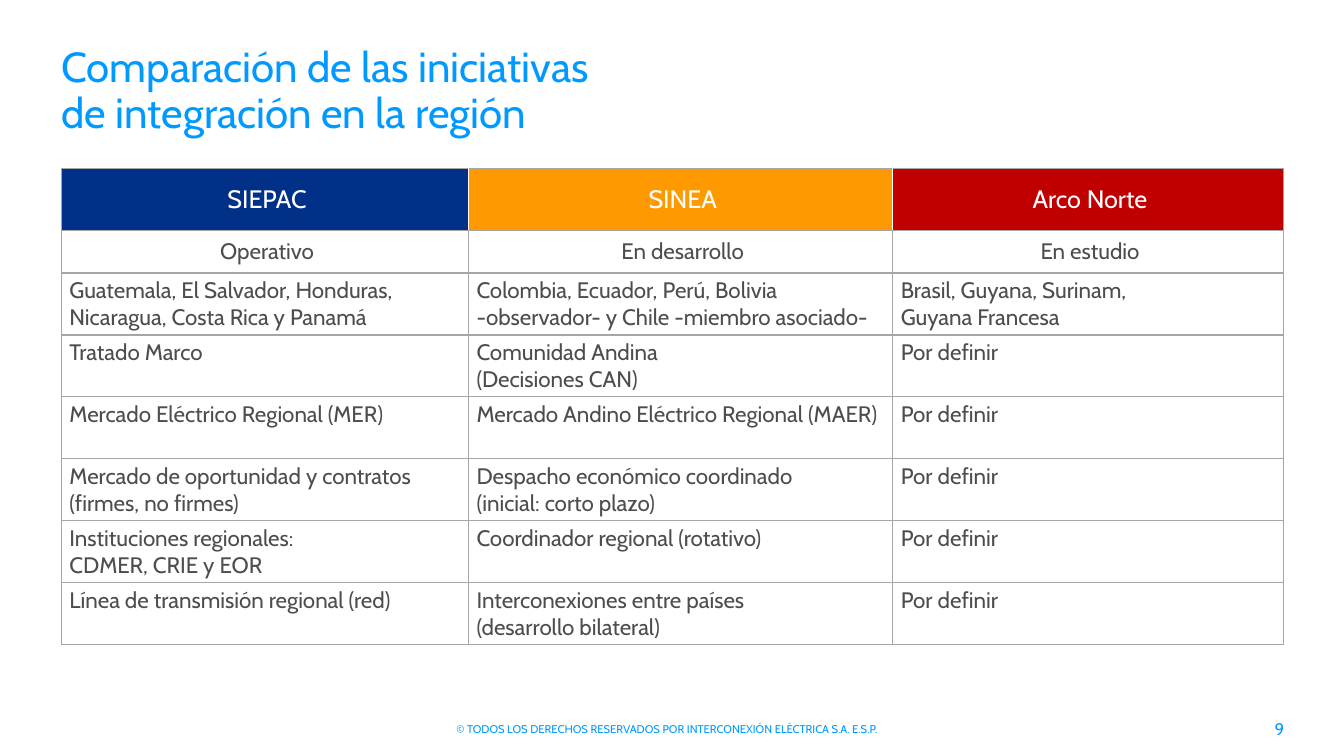
from lxml import etree
from pptx import Presentation
from pptx.dml.color import RGBColor
from pptx.enum.text import MSO_ANCHOR, PP_ALIGN
from pptx.oxml.ns import qn
from pptx.util import Cm, Pt

LEFT, CENTER, RIGHT = PP_ALIGN.LEFT, PP_ALIGN.CENTER, PP_ALIGN.RIGHT
TOP, MIDDLE, BOTTOM = MSO_ANCHOR.TOP, MSO_ANCHOR.MIDDLE, MSO_ANCHOR.BOTTOM

FONT = "Cabin"
SKY = RGBColor(0x00, 0x99, 0xFF)
NAVY = RGBColor(0x00, 0x30, 0x87)
ORANGE = RGBColor(0xFF, 0x99, 0x00)
RED = RGBColor(0xC0, 0x00, 0x00)
WHITE = RGBColor(0xFF, 0xFF, 0xFF)
TEXT_GRAY = RGBColor(0x4D, 0x4D, 0x4D)
LINE_GRAY = RGBColor(0xA6, 0xA6, 0xA6)

HEADER_FILLS = [NAVY, ORANGE, RED]
COLUMN_WIDTHS = [10.26, 10.69, 9.84]
ROW_HEIGHT = 1.56
STATUS_HEIGHT = 1.08
PENDING = "Por definir"
COMPARISON = [
    ["SIEPAC", "SINEA", "Arco Norte"],
    ["Operativo", "En desarrollo", "En estudio"],
    ["Guatemala, El Salvador, Honduras, Nicaragua, Costa Rica y Panamá",
     "Colombia, Ecuador, Perú, Bolivia\n-observador- y Chile -miembro asociado-",
     "Brasil, Guyana, Surinam,\nGuyana Francesa"],
    ["Tratado Marco", "Comunidad Andina\n(Decisiones CAN)", PENDING],
    ["Mercado Eléctrico Regional (MER)",
     "Mercado Andino Eléctrico Regional (MAER)", PENDING],
    ["Mercado de oportunidad y contratos (firmes, no firmes)",
     "Despacho económico coordinado\n(inicial: corto plazo)", PENDING],
    ["Instituciones regionales:\nCDMER, CRIE y EOR",
     "Coordinador regional (rotativo)", PENDING],
    ["Línea de transmisión regional (red)",
     "Interconexiones entre países\n(desarrollo bilateral)", PENDING],
]


def set_attributes(target, values):
    for name, value in values.items():
        setattr(target, name, value)


def write_text(paragraph, text, size, color, alignment):
    paragraph.text = text
    paragraph.alignment = alignment
    set_attributes(paragraph.font, {"name": FONT, "size": Pt(size)})
    paragraph.font.color.rgb = color


def set_margins(target, margins):
    sides = ("margin_left", "margin_top", "margin_right", "margin_bottom")
    set_attributes(target, {side: Cm(margin) for side, margin in zip(sides, margins)})


def add_text(slide, box, text, size, alignment, anchor, margins):
    frame = slide.shapes.add_textbox(*[Cm(length) for length in box]).text_frame
    set_attributes(frame, {"word_wrap": True, "vertical_anchor": anchor})
    set_margins(frame, margins)
    write_text(frame.paragraphs[0], text, size, SKY, alignment)
    return frame.paragraphs[0]


def add_border(cell, side, color, width):
    properties = cell._tc.get_or_add_tcPr()
    line = etree.SubElement(properties, qn(f"a:ln{side}"), w=str(Pt(width)))
    fill = etree.SubElement(line, qn("a:solidFill"))
    etree.SubElement(fill, qn("a:srgbClr"), val=str(color))


def format_cell(cell, text, row, column):
    is_header = row == 0
    is_centered = row < 2
    last_column = len(COLUMN_WIDTHS) - 1
    white_sides = {"L": is_header and column > 0,
                   "R": is_header and column < last_column}
    for side in "LRTB":
        if white_sides.get(side):
            add_border(cell, side, WHITE, 0.75)
        else:
            add_border(cell, side, LINE_GRAY, 1)
    cell.fill.solid()
    cell.fill.fore_color.rgb = HEADER_FILLS[column] if is_header else WHITE
    cell.vertical_anchor = MIDDLE if is_centered else TOP
    set_margins(cell, (0.2, 0.1, 0.1, 0.1))
    write_text(cell.text_frame.paragraphs[0], text,
               18 if is_header else 16,
               WHITE if is_header else TEXT_GRAY,
               CENTER if is_centered else LEFT)


def add_comparison_table(slide):
    heights = [STATUS_HEIGHT if row == 1 else ROW_HEIGHT for row in range(len(COMPARISON))]
    table = slide.shapes.add_table(
        len(heights), len(COLUMN_WIDTHS), Cm(1.55), Cm(4.24),
        Cm(sum(COLUMN_WIDTHS)), Cm(sum(heights))).table
    for column, width in zip(table.columns, COLUMN_WIDTHS):
        column.width = Cm(width)
    for row, height in zip(table.rows, heights):
        row.height = Cm(height)
    for row, texts in enumerate(COMPARISON):
        for column, text in enumerate(texts):
            format_cell(table.cell(row, column), text, row, column)


def main():
    presentation = Presentation()
    set_attributes(presentation, {"slide_width": Cm(33.87), "slide_height": Cm(19.05)})
    slide = presentation.slides.add_slide(presentation.slide_layouts[6])

    # Title
    title = add_text(slide, (1.55, 0.46, 22.07, 3),
                     "Comparación de las iniciativas\nde integración en la región",
                     30, LEFT, BOTTOM, (0, 0, 0, 0))
    title.line_spacing = 0.9

    # Comparison of the three initiatives
    add_comparison_table(slide)

    # Footer and page number
    add_text(slide, (11.05, 18.06, 11.79, 0.61),
             "© TODOS LOS DERECHOS RESERVADOS POR INTERCONEXIÓN ELÉCTRICA S.A. E.S.P.",
             8, CENTER, TOP, (0, 0.13, 0.25, 0.13))
    add_text(slide, (29.16, 17.86, 3.2, 1.02), "9", 12, RIGHT, MIDDLE,
             (0.25, 0.13, 0, 0.13))

    presentation.save("out.pptx")


if __name__ == "__main__":
    main()
